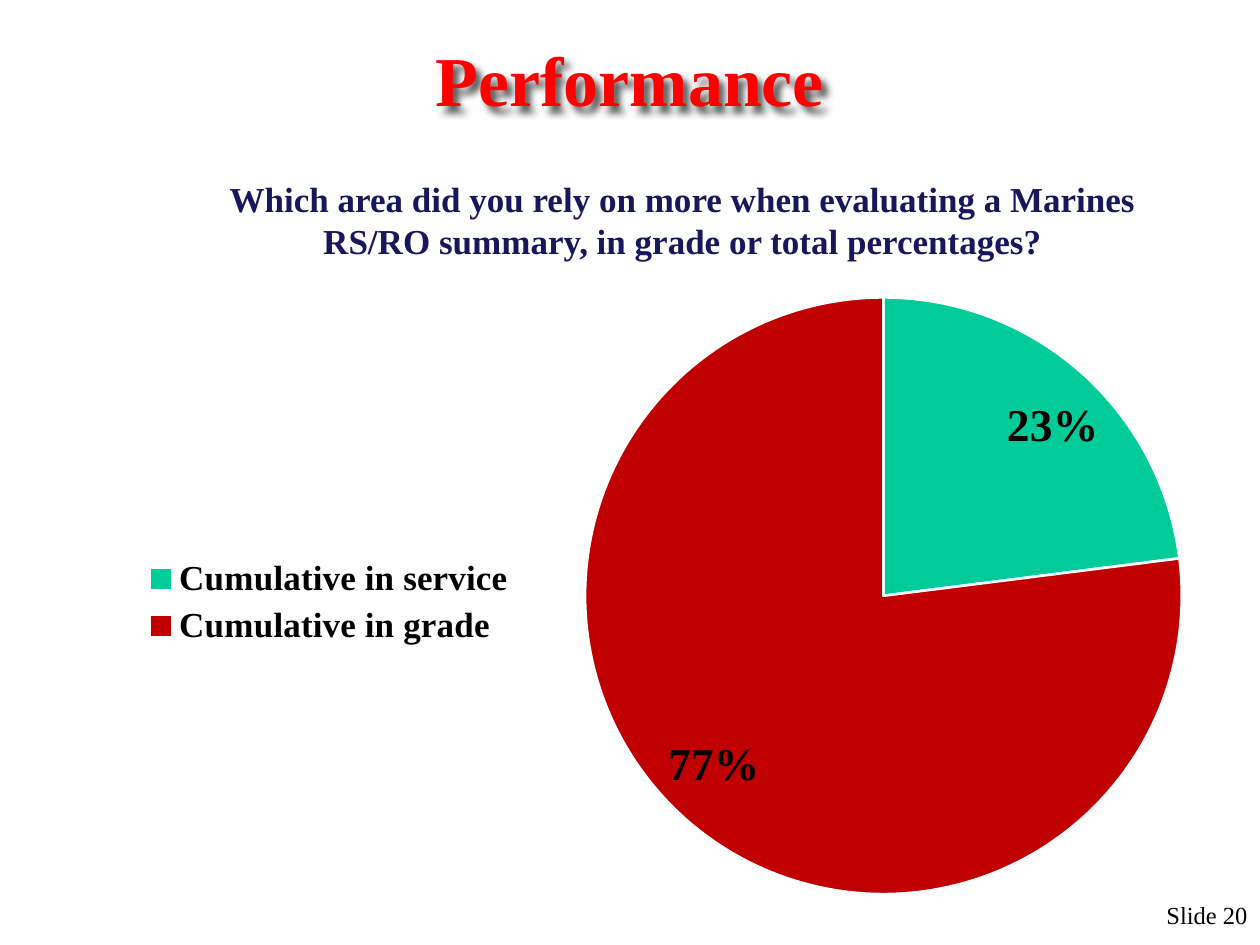
from dataclasses import dataclass

from lxml.etree import SubElement
from pptx import Presentation
from pptx.chart.data import CategoryChartData
from pptx.dml.color import RGBColor
from pptx.enum.chart import XL_CHART_TYPE as ChartType
from pptx.enum.chart import XL_LABEL_POSITION as LabelPosition
from pptx.enum.chart import XL_LEGEND_POSITION as LegendPosition
from pptx.enum.text import MSO_ANCHOR as Anchor
from pptx.enum.text import PP_ALIGN as Align
from pptx.oxml import parse_xml
from pptx.oxml.ns import nsdecls, qn
from pptx.util import Pt


@dataclass(frozen=True)
class Theme:
    font: str = "Times New Roman"
    chart_font: str = "Arial"
    title: str = "FF0000"
    question: str = "17175C"
    ink: str = "000000"
    slice_edge: str = "FFFFFF"
    service: str = "00CC99"
    grade: str = "C00000"
    title_size: int = 40
    body_size: int = 20
    label_size: int = 26
    number_size: int = 14
    chart_size: int = 10


class SlideBuilder:
    def __init__(self, slide, theme):
        self.slide = slide
        self.theme = theme

    def style(self, font, size, color, bold=False, name=None):
        font.name = name or self.theme.font
        font.size = Pt(size)
        font.bold = bold
        font.color.rgb = RGBColor.from_string(color)

    def text(self, box, content, size, color, align, bold=False, anchor=Anchor.TOP):
        shape = self.slide.shapes.add_textbox(*map(Pt, box))
        frame = shape.text_frame
        frame.word_wrap = True
        frame.vertical_anchor = anchor
        frame.text = content
        paragraph = frame.paragraphs[0]
        paragraph.alignment = align
        self.style(paragraph.runs[0].font, size, color, bold)
        return shape

    def drop_shadow(self, shape):
        shape.fill.background()
        shape.element.spPr.append(parse_xml(
            f'<a:effectLst {nsdecls("a")}>'
            '<a:outerShdw blurRad="50800" dist="50800" dir="2700000" algn="tl">'
            '<a:srgbClr val="000000"><a:alpha val="65000"/></a:srgbClr>'
            '</a:outerShdw></a:effectLst>'))

    def pie(self, box, values, colors, plot_area, legend_area):
        data = CategoryChartData(number_format="0%")
        data.categories = list(values)
        data.add_series("Series 1", list(values.values()))
        chart = self.slide.shapes.add_chart(ChartType.PIE, *map(Pt, box), data).chart
        theme = self.theme
        self.style(chart.font, theme.chart_size, theme.ink, name=theme.chart_font)
        chart.has_title = False

        chart.has_legend = True
        legend = chart.legend
        legend.position = LegendPosition.LEFT
        legend.include_in_layout = False
        self.style(legend.font, theme.body_size, theme.ink, bold=True)

        plot = chart.plots[0]
        plot.vary_by_categories = True
        series = plot.series[0]
        for index, color in enumerate(colors):
            slice_format = series.points[index].format
            slice_format.fill.solid()
            slice_format.fill.fore_color.rgb = RGBColor.from_string(color)
            slice_format.line.color.rgb = RGBColor.from_string(theme.slice_edge)
            slice_format.line.width = Pt(1.5)

        labels = series.data_labels
        labels.show_value = True
        labels.show_percentage = False
        labels.number_format = "0%"
        labels.number_format_is_linked = False
        labels.position = LabelPosition.BEST_FIT
        self.style(labels.font, theme.label_size, theme.ink, bold=True)

        plot_element = chart.element.find(".//" + qn("c:plotArea"))
        self.place(plot_element, plot_area, inner=True)
        self.place(legend.element if hasattr(legend, "element")
                   else chart.element.find(".//" + qn("c:legend")), legend_area)

    def place(self, part, area, inner=False):
        """Fix a chart part at x, y, width, height, as fractions of the chart."""
        layout = part.find(qn("c:layout"))
        if layout is None:
            layout = parse_xml(f'<c:layout {nsdecls("c")}/>')
            position = part.find(qn("c:legendPos"))
            if position is None:
                part.insert(0, layout)
            else:
                position.addnext(layout)
        for child in list(layout):
            layout.remove(child)
        manual = SubElement(layout, qn("c:manualLayout"))
        settings = [("layoutTarget", "inner")] if inner else []
        settings += [("xMode", "edge"), ("yMode", "edge")]
        settings += zip("xywh", map(str, area))
        for tag, value in settings:
            SubElement(manual, qn(f"c:{tag}")).set("val", value)


def main():
    presentation = Presentation()
    presentation.slide_width, presentation.slide_height = Pt(720), Pt(540)
    theme = Theme()
    builder = SlideBuilder(
        presentation.slides.add_slide(presentation.slide_layouts[6]), theme)

    title = builder.text((0, 24, 720, 42), "Performance", theme.title_size,
                         theme.title, Align.CENTER, bold=True, anchor=Anchor.MIDDLE)
    builder.drop_shadow(title)
    builder.text((96, 98, 588, 53),
                 "Which area did you rely on more when evaluating a Marines "
                 "RS/RO summary, in grade or total percentages?",
                 theme.body_size, theme.question, Align.CENTER, bold=True)
    builder.text((548, 511, 172, 29), "Slide 20", theme.number_size,
                 theme.ink, Align.RIGHT)
    builder.pie((42, 158, 696, 365),
                {"Cumulative in service": 0.23, "Cumulative in grade": 0.77},
                (theme.service, theme.grade),
                plot_area=(0.42, 0.03, 0.49, 0.94),
                legend_area=(0.05, 0.43, 0.32, 0.16))
    presentation.save("out.pptx")


if __name__ == "__main__":
    main()
